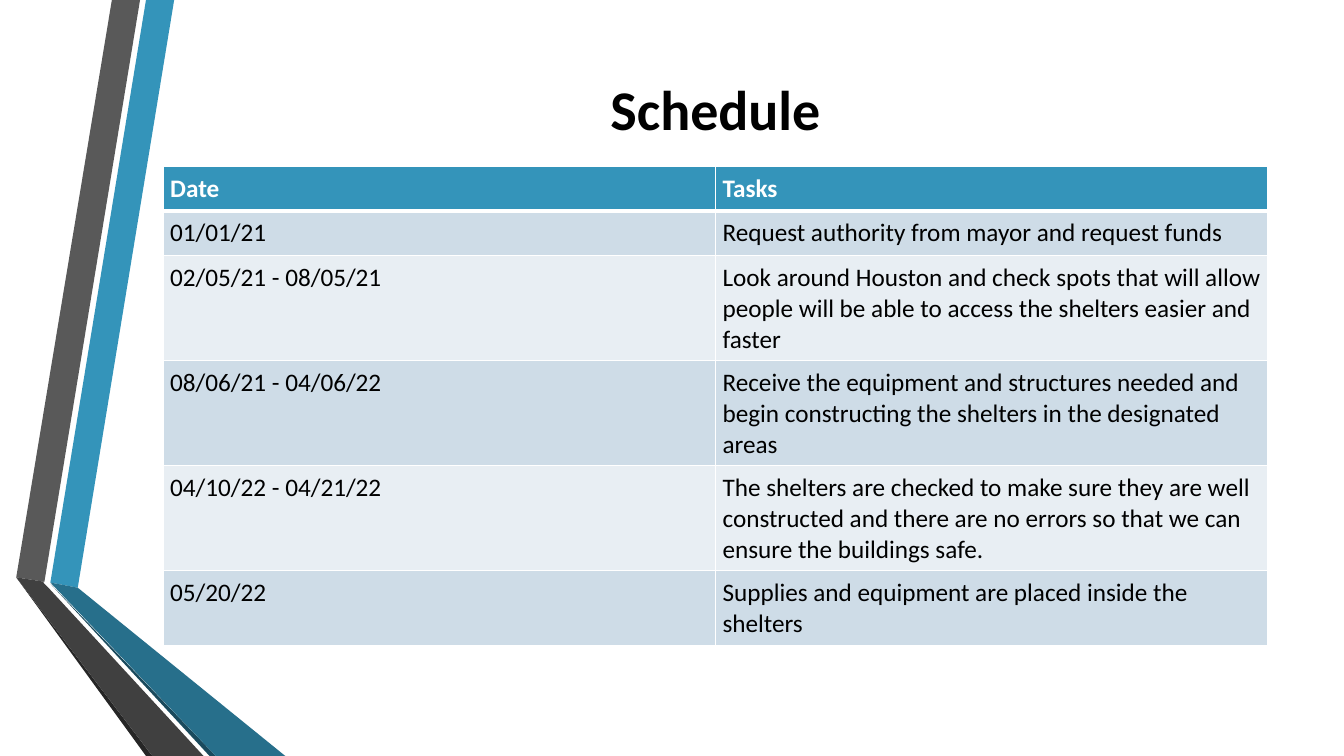
import pptx
import pptx.dml.color
import pptx.enum.text
import pptx.oxml
import pptx.oxml.ns
import pptx.util
from pptx.dml.color import RGBColor
from pptx.util import Cm

BLACK = RGBColor(0x00, 0x00, 0x00)
WHITE = RGBColor(0xFF, 0xFF, 0xFF)
BLUE = RGBColor(0x34, 0x94, 0xBA)
DEEP_BLUE = RGBColor(0x27, 0x6F, 0x8B)
NAVY = RGBColor(0x1A, 0x4A, 0x5D)
GREY = RGBColor(0x59, 0x59, 0x59)
DARK_GREY = RGBColor(0x40, 0x40, 0x40)
CHARCOAL = RGBColor(0x26, 0x26, 0x26)
BAND_DARK = RGBColor(0xCE, 0xDC, 0xE7)
BAND_LIGHT = RGBColor(0xE8, 0xEE, 0xF3)

FONT = "Calibri"
LEFT, WIDTH = 4.11, 27.84
CELL_MARGIN = Cm(0.18)

RIBBONS = [
    (BLUE, [(1.27, 14.68), (1.96, 14.81), (4.39, 0), (3.68, 0)]),
    (GREY, [(3.53, 0), (2.82, 0), (0.41, 14.55), (1.12, 14.66)]),
    (CHARCOAL, [(0.41, 14.55), (3.68, 19.05), (3.84, 19.05)]),
    (NAVY, [(1.27, 14.71), (5.28, 19.05), (5.44, 19.05)]),
    (DEEP_BLUE, [(1.27, 14.68), (5.44, 19.05), (7.19, 19.05), (1.96, 14.81)]),
    (DARK_GREY, [(5.13, 19.05), (1.22, 14.81), (1.09, 14.68), (1.12, 14.66),
                 (0.41, 14.55), (3.84, 19.05)]),
]

SCHEDULE = [
    (1.12, "Date", "Tasks"),
    (1.12, "01/01/21", "Request authority from mayor and request funds"),
    (2.64, "02/05/21 - 08/05/21",
     "Look around Houston and check spots that will allow people will be able "
     "to access the shelters easier and faster"),
    (2.64, "08/06/21 - 04/06/22",
     "Receive the equipment and structures needed and begin constructing "
     "the shelters in the designated areas"),
    (2.64, "04/10/22 - 04/21/22",
     "The shelters are checked to make sure they are well constructed and "
     "there are no errors so that we can ensure the buildings safe."),
    (1.88, "05/20/22", "Supplies and equipment are placed inside the shelters"),
]


def write_text(tf, text, size=18, color=BLACK, bold=False, align=None):
    p = tf.paragraphs[0]
    p.alignment = align
    r = p.add_run()
    r.text = text
    r.font.name = FONT
    r.font.size = pptx.util.Pt(size)
    r.font.bold = bold
    r.font.color.rgb = color


def add_ribbon(s, color, points):
    start, *rest = [(Cm(x), Cm(y)) for x, y in points]
    builder = s.shapes.build_freeform(*start)
    builder.add_line_segments(rest, close=True)
    sp = builder.convert_to_shape()
    sp.shadow.inherit = False
    sp.fill.solid()
    sp.fill.fore_color.rgb = color
    sp.line.fill.background()


def add_title(s, text):
    sp = s.shapes.add_textbox(Cm(LEFT), Cm(0.97), Cm(WIDTH), Cm(3.53))
    tf = sp.text_frame
    tf.word_wrap = True
    tf.vertical_anchor = pptx.enum.text.MSO_ANCHOR.MIDDLE
    write_text(tf, text, size=40, bold=True,
               align=pptx.enum.text.PP_ALIGN.CENTER)


def set_borders(cell, **widths):
    tc_pr = cell._tc.get_or_add_tcPr()
    for i, side in enumerate("LRTB"):
        width = pptx.util.Pt(widths.get(side, 1))
        tc_pr.insert(i, pptx.oxml.parse_xml(
            f'<a:ln{side} {pptx.oxml.ns.nsdecls("a")} w="{width}"><a:solidFill>'
            f'<a:srgbClr val="{WHITE}"/></a:solidFill></a:ln{side}>'))


def fill_cell(cell, text, row):
    header = row == 0
    cell.margin_left = cell.margin_right = CELL_MARGIN
    cell.margin_top = cell.margin_bottom = CELL_MARGIN
    cell.fill.solid()
    cell.fill.fore_color.rgb = (
        BLUE if header else BAND_DARK if row % 2 else BAND_LIGHT)
    borders = {0: {"B": 3}, 1: {"T": 3}}
    set_borders(cell, **borders.get(row, {}))
    write_text(cell.text_frame, text, bold=header,
               color=WHITE if header else BLACK)


def add_schedule(s, rows):
    height = sum(row[0] for row in rows)
    table = s.shapes.add_table(len(rows), 2, Cm(LEFT), Cm(4.19),
                               Cm(WIDTH), Cm(height)).table
    for i, (row_height, *texts) in enumerate(rows):
        table.rows[i].height = Cm(row_height)
        for j, text in enumerate(texts):
            fill_cell(table.cell(i, j), text, i)


def main():
    prs = pptx.Presentation()
    prs.slide_width, prs.slide_height = Cm(33.87), Cm(19.05)
    s = prs.slides.add_slide(prs.slide_layouts[6])
    for color, points in RIBBONS:
        add_ribbon(s, color, points)
    add_title(s, "Schedule")
    add_schedule(s, SCHEDULE)
    prs.save("out.pptx")


if __name__ == "__main__":
    main()
